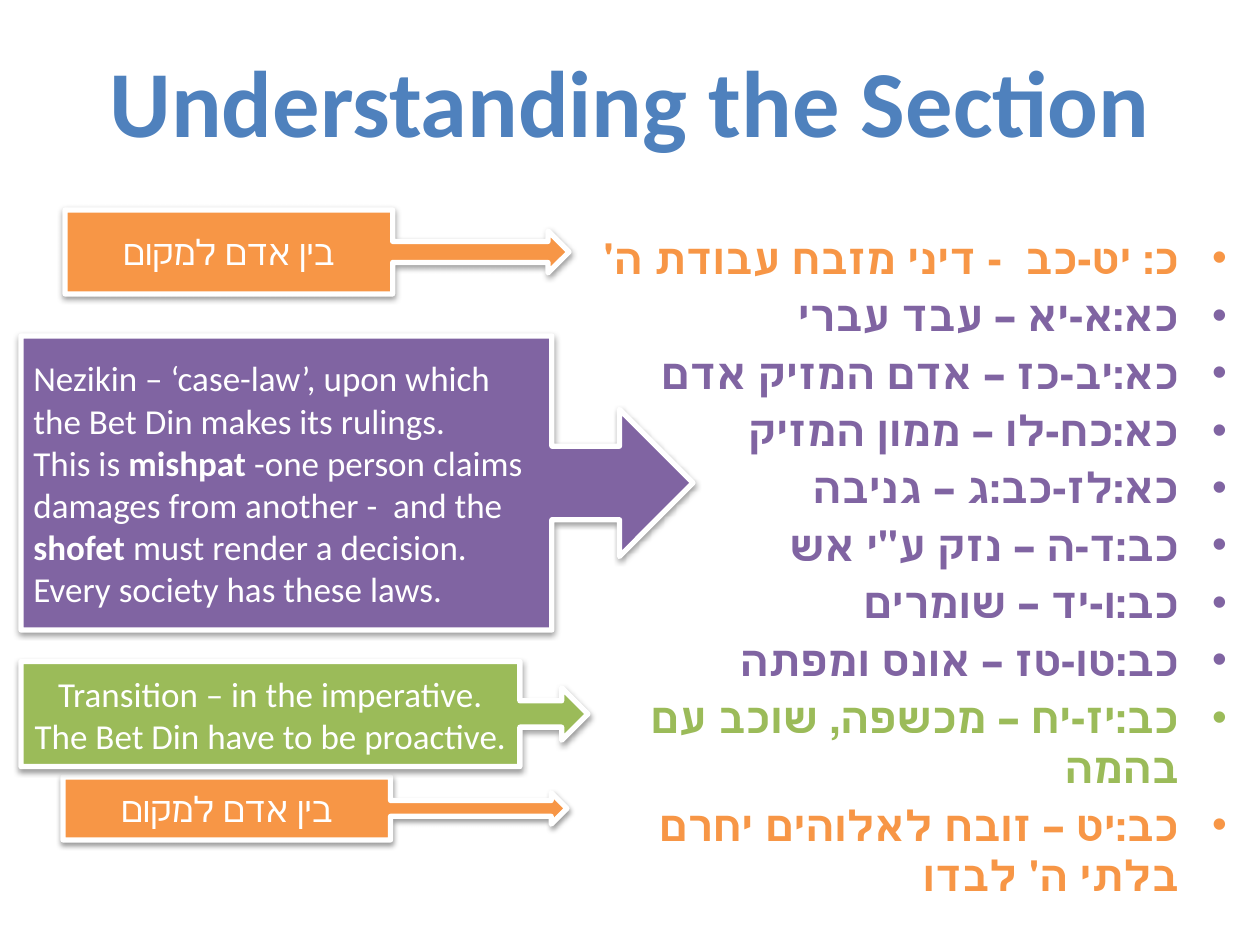
from lxml import etree
from pptx import Presentation
from pptx.dml.color import RGBColor
from pptx.enum.shapes import MSO_SHAPE
from pptx.enum.text import MSO_ANCHOR, PP_ALIGN
from pptx.oxml import parse_xml
from pptx.oxml.ns import nsdecls, qn
from pptx.util import Inches, Pt

CALLOUT = MSO_SHAPE.RIGHT_ARROW_CALLOUT
MIDDLE = MSO_ANCHOR.MIDDLE
LEFT, CENTER, RIGHT = PP_ALIGN.LEFT, PP_ALIGN.CENTER, PP_ALIGN.RIGHT

BLUE = RGBColor(0x4F, 0x81, 0xBD)
ORANGE = RGBColor(0xF7, 0x96, 0x46)
PURPLE = RGBColor(0x80, 0x64, 0xA2)
GREEN = RGBColor(0x9B, 0xBB, 0x59)
WHITE = RGBColor(0xFF, 0xFF, 0xFF)

CELL = Inches(10) // 60  # the slide is a grid of 60 columns by 45 rows
SHADOW = (
    f'<a:effectLst {nsdecls("a")}>'
    '<a:outerShdw blurRad="40000" dist="20000" dir="5400000" rotWithShape="0">'
    '<a:srgbClr val="000000"><a:alpha val="38000"/></a:srgbClr>'
    '</a:outerShdw></a:effectLst>'
)


def grid(*cells):
    return [round(cell * CELL) for cell in cells]


def write(paragraph, *texts, size, color, align=CENTER, bold=False):
    """Add the texts as runs; every second one has the opposite weight."""
    paragraph.alignment = align
    for i, text in enumerate(texts):
        run = paragraph.add_run()
        run.text = text
        run.font.name = "Calibri"
        run.font.size = Pt(size)
        run.font.bold = bold != (i % 2 == 1)
        run.font.color.rgb = color


prs = Presentation()
prs.slide_width, prs.slide_height = 60 * CELL, 45 * CELL
slide = prs.slides.add_slide(prs.slide_layouts[5])

title = slide.shapes.title
title.left, title.top, title.width, title.height = grid(3, 1, 54, 7.5)
title.text_frame.vertical_anchor = MIDDLE
write(title.text_frame.paragraphs[0], "Understanding the Section",
      size=54, color=BLUE, bold=True)

# Right-to-left list of verses, coloured by section
verses = [
    ("כ: יט-כב  - דיני מזבח עבודת ה'", ORANGE),
    ("כא:א-יא – עבד עברי", PURPLE),
    ("כא:יב-כז – אדם המזיק אדם", PURPLE),
    ("כא:כח-לו – ממון המזיק", PURPLE),
    ("כא:לז-כב:ג – גניבה", PURPLE),
    ("כב:ד-ה – נזק ע\"י אש", PURPLE),
    ("כב:ו-יד – שומרים", PURPLE),
    ("כב:טו-טז – אונס ומפתה", PURPLE),
    ("כב:יז-יח – מכשפה, שוכב עם בהמה", GREEN),
    ("כב:יט – זובח לאלוהים יחרם בלתי ה' לבדו", ORANGE),
]
outline = slide.shapes.add_textbox(*grid(28, 8, 31, 35)).text_frame
outline.word_wrap = True
outline.margin_top = Inches(0.51)
for i, (verse, color) in enumerate(verses):
    paragraph = outline.add_paragraph() if i else outline.paragraphs[0]
    write(paragraph, verse, size=24, color=color, align=RIGHT, bold=True)
    paragraph.space_before = Pt(4 if i else 0)
    properties = paragraph.runs[0].font._element.getparent().getparent().pPr
    properties.set("rtl", "1")
    properties.set("marL", str(Inches(0.38)))
    properties.set("indent", str(-Inches(0.38)))
    etree.SubElement(properties, qn("a:buFont"), typeface="Arial")
    etree.SubElement(properties, qn("a:buChar"), char="•")

# Callouts: grid place, share of the width taken by the box, colour, alignment, paragraphs
god_and_man = [["בין אדם למקום"]]
case_law = [
    ["Nezikin – ‘case-law’, upon which the Bet Din makes its rulings."],
    ["This is ", "mishpat", " -one person claims damages from another -  and the ",
     "shofet ", "must render a decision."],
    ["Every society has these laws."],
]
transition = [["Transition – in the imperative. The Bet Din have to be proactive."]]
callouts = [
    ((3.1, 10, 24, 4), 0.65, ORANGE, CENTER, god_and_man),
    ((3, 37, 24, 3), 0.65, ORANGE, CENTER, god_and_man),
    ((1, 16, 32, 14), 0.79, PURPLE, LEFT, case_law),
    ((1, 31.5, 27, 5), 0.88, GREEN, CENTER, transition),
]
for place, box_share, color, align, paragraphs in callouts:
    callout = slide.shapes.add_shape(CALLOUT, *grid(*place))
    callout.adjustments[3] = box_share
    callout.fill.solid()
    callout.fill.fore_color.rgb = color
    callout.line.color.rgb = WHITE
    callout.line.width = Pt(3)
    callout._element.spPr.append(parse_xml(SHADOW))
    frame = callout.text_frame
    frame.word_wrap = True
    frame.vertical_anchor = MIDDLE
    for i, texts in enumerate(paragraphs):
        paragraph = frame.add_paragraph() if i else frame.paragraphs[0]
        write(paragraph, *texts, size=20, color=WHITE, align=align)

prs.save("out.pptx")
